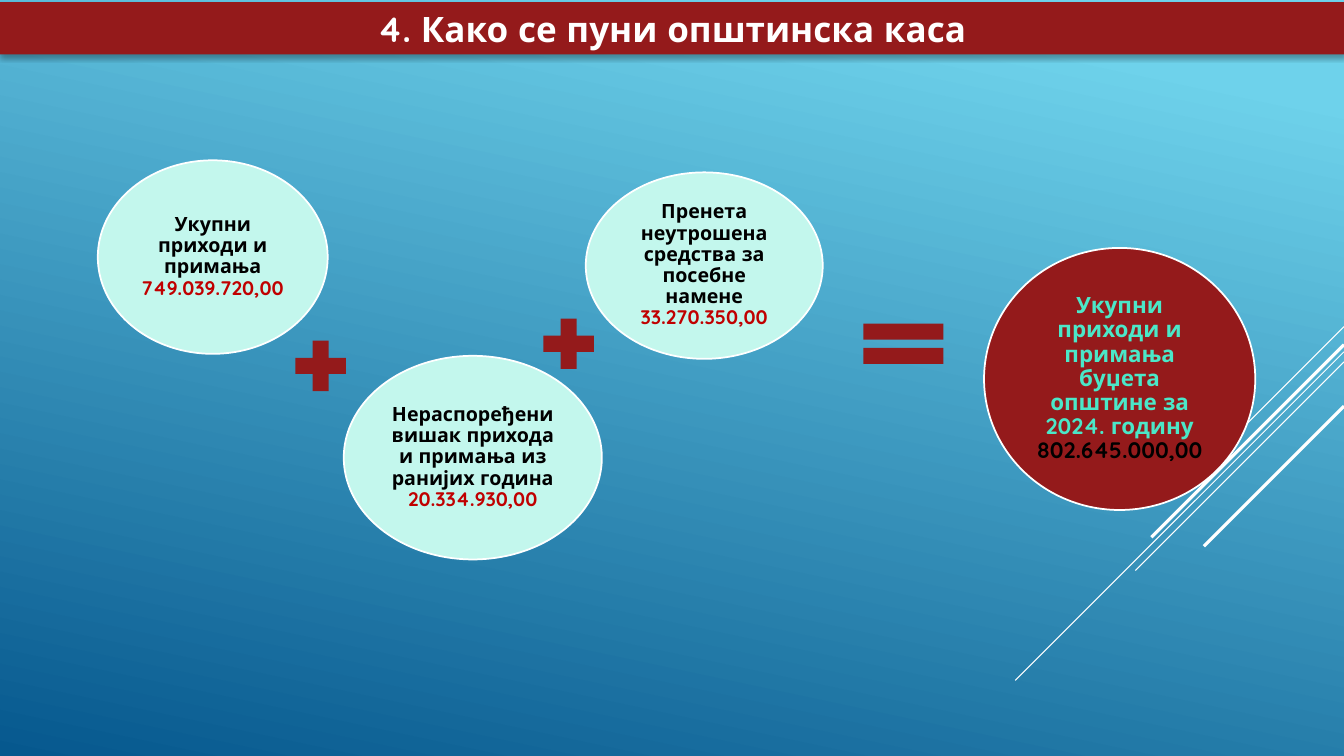
from dataclasses import dataclass

from lxml import etree
from pptx import Presentation
from pptx.dml.color import RGBColor
from pptx.enum import shapes, text
from pptx.oxml import ns, parse_xml
from pptx.util import Inches, Pt

WHITE = RGBColor(0xFF, 0xFF, 0xFF)
BLACK = RGBColor(0, 0, 0)
MAROON = RGBColor(0x94, 0x1A, 0x1B)
RED = RGBColor(0xC0, 0, 0)
MINT = RGBColor(0xC3, 0xF7, 0xED)
TEAL = RGBColor(0x4B, 0xE7, 0xC8)
SKY = RGBColor(0x6E, 0xD2, 0xEB)
NAVY = RGBColor(0x06, 0x58, 0x8E)
FONT = "Quicksand"
WIDE, HIGH = 13.33, 7.5
KIND = shapes.MSO_SHAPE


@dataclass
class Ray:
    """A 45-degree line falling left from the slide's right edge."""
    top: float
    run: float
    width: float


@dataclass
class Bubble:
    left: float
    top: float
    width: float
    height: float
    label: str
    amount: str
    fill: RGBColor = MINT
    ink: RGBColor = BLACK
    accent: RGBColor = RED
    size: int = 14


@dataclass
class Sign:
    kind: shapes.MSO_SHAPE
    left: float
    top: float
    width: float


RAYS = [
    Ray(3.24, 1, 0.75),
    Ray(3.49, 3.26, 0.75),
    Ray(3.59, 2.07, 0.75),
    Ray(3.42, 1.91, 2.25),
    Ray(4.03, 1.39, 2.25),
]
BUBBLES = [
    Bubble(0.97, 1.59, 2.28, 1.92, "Укупни приходи и примања ", "749.039.720,00"),
    Bubble(3.41, 3.53, 2.56, 2.02,
           "Нераспоређени вишак прихода и примања из ранијих година ",
           "20.334.930,00"),
    Bubble(5.81, 1.71, 2.35, 1.85,
           "Пренета неутрошена средства за посебне намене ", "33.270.350,00"),
    Bubble(9.76, 2.46, 2.69, 2.6,
           "Укупни приходи и примања буџета општине за 2024. годину ",
           "802.645.000,00", MAROON, TEAL, BLACK, 16),
]
SIGNS = [
    Sign(KIND.MATH_PLUS, 2.84, 3.29, 0.68),
    Sign(KIND.MATH_PLUS, 5.3, 3.07, 0.68),
    Sign(KIND.MATH_EQUAL, 8.42, 3.07, 1.08),
]
SHADOW = (
    f'<a:effectLst {ns.nsdecls("a")}><a:outerShdw blurRad="{Pt(3.5)}" '
    f'dist="{Pt(2.2)}" dir="5400000" algn="t" rotWithShape="0">'
    '<a:srgbClr val="000000"><a:alpha val="32000"/></a:srgbClr>'
    '</a:outerShdw></a:effectLst>'
)


def paint(slide) -> None:
    """Fill the background with the blue gradient."""
    fill = slide.background.fill
    fill.gradient()
    fill.gradient_angle = 258
    for stop, color, place in zip(fill.gradient_stops, (SKY, NAVY), (0.1, 1)):
        stop.color.rgb = color
        stop.position = place


def add_title(slide, words: str) -> None:
    title = slide.shapes.title
    title.left, title.top = Inches(0), Inches(0.02)
    title.width, title.height = Inches(WIDE), Inches(0.52)
    props = title._element.spPr
    props.append(parse_xml(
        f'<a:prstGeom {ns.nsdecls("a")} prst="roundRect"><a:avLst/></a:prstGeom>'))
    title.fill.solid()
    title.fill.fore_color.rgb = MAROON
    props.append(parse_xml(SHADOW))
    frame = title.text_frame
    frame.text = words
    frame.vertical_anchor = text.MSO_ANCHOR.MIDDLE
    para = frame.paragraphs[0]
    para.alignment = text.PP_ALIGN.CENTER
    font = para.font
    font.name, font.size, font.bold = FONT, Pt(25), True
    font.color.rgb = WHITE


def add_ray(slide, ray: Ray) -> None:
    line = slide.shapes.add_connector(
        shapes.MSO_CONNECTOR.STRAIGHT, Inches(WIDE), Inches(ray.top),
        Inches(WIDE - ray.run), Inches(ray.top + ray.run))
    line.line.color.rgb = WHITE
    line.line.width = Pt(ray.width)
    etree.SubElement(line._element.spPr, ns.qn("a:effectLst"))


def add_form(slide, kind: shapes.MSO_SHAPE, left: float, top: float,
             width: float, height: float, fill: RGBColor):
    """Add a flat preset shape without an outline."""
    form = slide.shapes.add_shape(
        kind, Inches(left), Inches(top), Inches(width), Inches(height))
    form.shadow.inherit = False
    form.fill.solid()
    form.fill.fore_color.rgb = fill
    form.line.fill.background()
    return form


def add_bubble(slide, item: Bubble) -> None:
    oval = add_form(slide, KIND.OVAL, item.left, item.top,
                    item.width, item.height, item.fill)
    oval.line.color.rgb = WHITE
    oval.line.width = Pt(1.25)
    frame = oval.text_frame
    frame.word_wrap = True
    frame.vertical_anchor = text.MSO_ANCHOR.MIDDLE
    frame.margin_left = frame.margin_right = Inches(0.02)
    frame.margin_top = frame.margin_bottom = Inches(0.02)
    para = frame.paragraphs[0]
    para.alignment = text.PP_ALIGN.CENTER
    para.line_spacing = 0.9
    font = para.font
    font.name, font.size, font.bold = FONT, Pt(item.size), True
    for words, color in ((item.label, item.ink), (item.amount, item.accent)):
        run = para.add_run()
        run.text = words
        run.font.color.rgb = color


def main() -> None:
    deck = Presentation()
    deck.slide_width, deck.slide_height = Inches(WIDE), Inches(HIGH)
    slide = deck.slides.add_slide(deck.slide_layouts[5])
    paint(slide)
    add_title(slide, "4. Како се пуни општинска каса")
    for ray in RAYS:
        add_ray(slide, ray)
    for item in BUBBLES:
        add_bubble(slide, item)
    for sign in SIGNS:
        add_form(slide, sign.kind, sign.left, sign.top, sign.width, 0.68, MAROON)
    deck.save("out.pptx")


if __name__ == "__main__":
    main()
